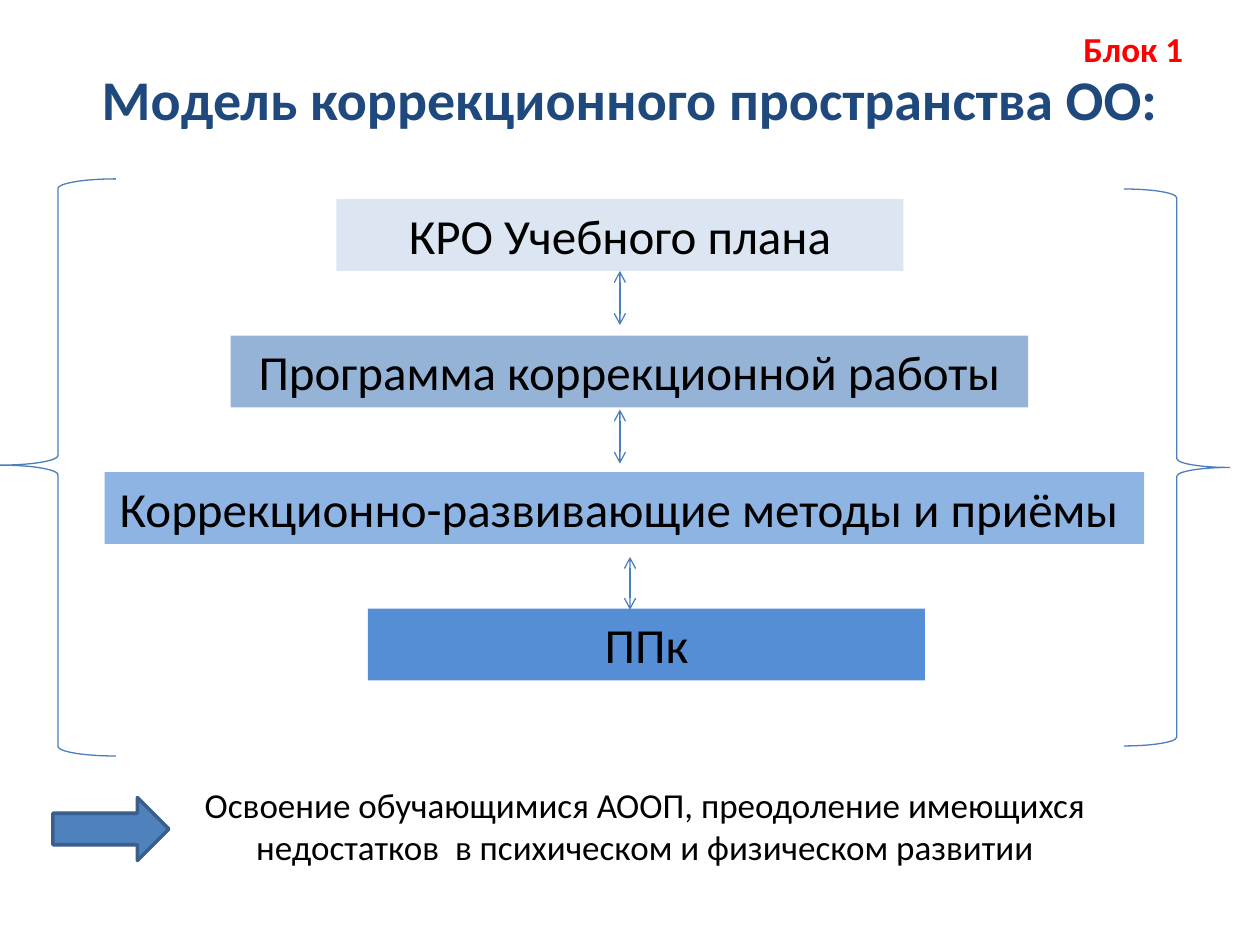
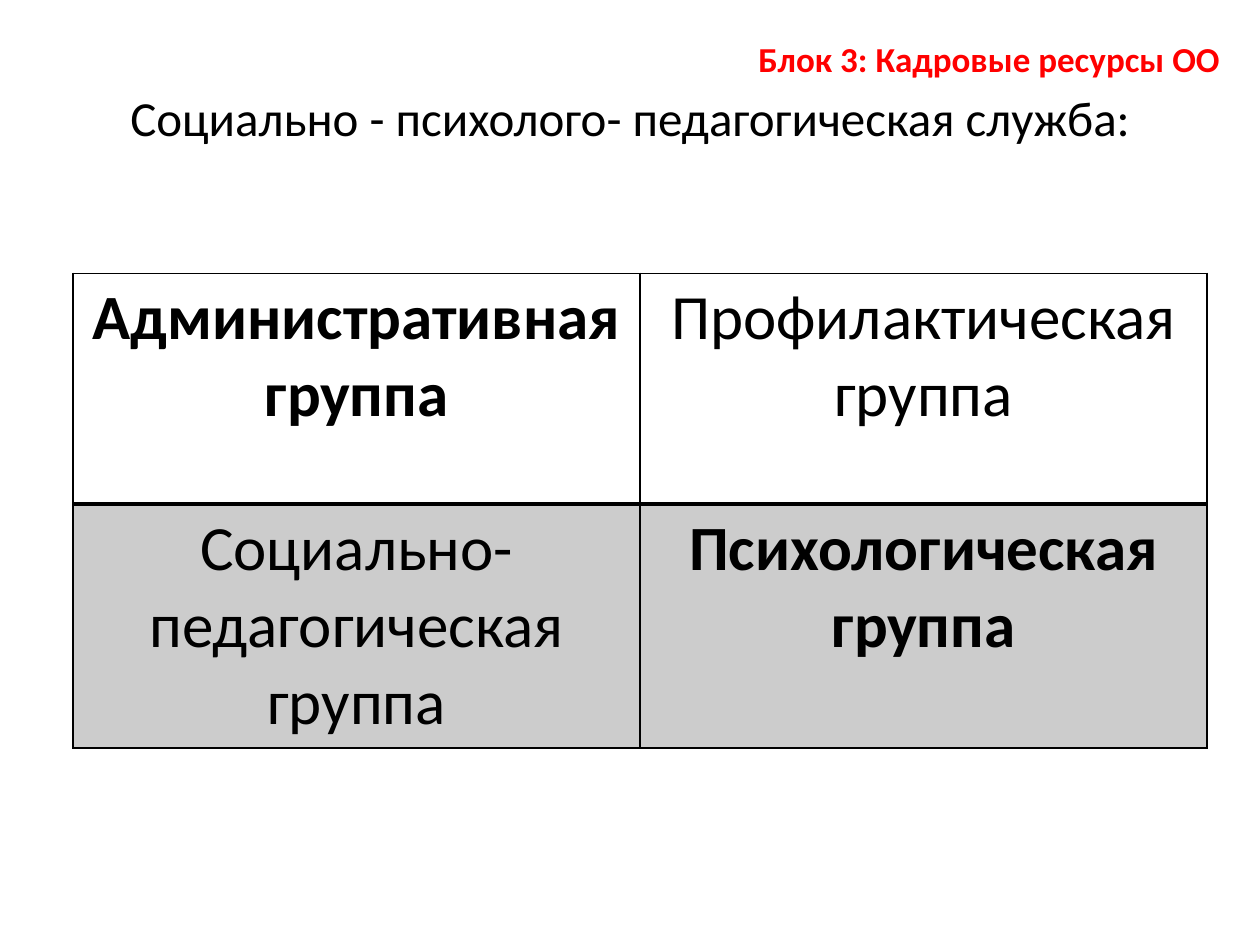
from dataclasses import dataclass

from lxml.etree import SubElement
from pptx import Presentation
from pptx.dml.color import RGBColor
from pptx.enum.shapes import MSO_CONNECTOR, MSO_SHAPE
from pptx.enum.text import MSO_ANCHOR, PP_ALIGN
from pptx.oxml.ns import qn
from pptx.shapes.autoshape import Shape
from pptx.shapes.connector import Connector
from pptx.slide import Slide
from pptx.table import _Cell
from pptx.text.text import TextFrame
from pptx.util import Inches, Pt

FONT = "Calibri"
BLACK = RGBColor(0x00, 0x00, 0x00)
WHITE = RGBColor(0xFF, 0xFF, 0xFF)
GREY = RGBColor(0xCC, 0xCC, 0xCC)
RED = RGBColor(0xFF, 0x00, 0x00)
NAVY = RGBColor(0x1F, 0x49, 0x7D)
LINE_BLUE = RGBColor(0x4B, 0x7E, 0xBC)
ARROW_FILL = RGBColor(0x4F, 0x81, 0xBD)
ARROW_EDGE = RGBColor(0x3A, 0x5F, 0x8C)

TITLE_ONLY = 5
STEP_TOP, STEP_PITCH, STEP_HEIGHT = 1.58, 13 / 12, 0.57
THIN, THICK = 1, 2


@dataclass(frozen=True)
class Box:
    left: float
    top: float
    width: float
    height: float

    def lengths(self) -> tuple[Inches, ...]:
        return tuple(map(Inches, (self.left, self.top, self.width, self.height)))


@dataclass(frozen=True)
class Step:
    text: str
    left: float
    width: float
    fill: RGBColor


@dataclass(frozen=True)
class Link:
    x: float
    top: float
    bottom: float


@dataclass(frozen=True)
class Group:
    text: str
    bold: bool


STEPS = (
    Step("КРО Учебного плана", 2.67, 4.5, RGBColor(0xDC, 0xE6, 0xF2)),
    Step("Программа коррекционной работы", 1.83, 6.33, RGBColor(0x95, 0xB3, 0xD7)),
    Step("Коррекционно-развивающие методы и приёмы ", 0.83, 8.25,
         RGBColor(0x8E, 0xB4, 0xE3)),
    Step("ППк", 2.92, 4.42, RGBColor(0x55, 0x8E, 0xD5)),
)
LINKS = (Link(4.92, 2.15, 2.58), Link(4.92, 3.25, 3.68), Link(5, 4.42, 4.84))
GROUPS = (
    (Group("Административная группа", True), Group("Профилактическая группа", False)),
    (Group("Социально-педагогическая группа", False),
     Group("Психологическая группа", True)),
)
ROW_HEIGHTS = (1.83, 1.93)
ROW_FILLS = (WHITE, GREY)


def write(frame: TextFrame, text: str, size: float, color: RGBColor = BLACK,
          bold: bool = False, align: PP_ALIGN = PP_ALIGN.CENTER) -> None:
    frame.text = text
    paragraph = frame.paragraphs[0]
    paragraph.alignment = align
    for run in paragraph.runs:
        run.font.name = FONT
        run.font.size = Pt(size)
        run.font.bold = bold
        run.font.color.rgb = color


def add_titled_slide(deck: Presentation, title: str, box: Box, size: float,
                     color: RGBColor, bold: bool) -> Slide:
    slide = deck.slides.add_slide(deck.slide_layouts[TITLE_ONLY])
    heading = slide.shapes.title
    heading.left, heading.top, heading.width, heading.height = box.lengths()
    write(heading.text_frame, title, size, color, bold)
    heading.text_frame.vertical_anchor = MSO_ANCHOR.MIDDLE
    return slide


def add_text(slide: Slide, text: str, box: Box, color: RGBColor = BLACK,
             bold: bool = False, align: PP_ALIGN = PP_ALIGN.CENTER,
             wrap: bool = True) -> None:
    frame = slide.shapes.add_textbox(*box.lengths()).text_frame
    frame.word_wrap = wrap
    write(frame, text, 20, color, bold, align)


def add_block_label(slide: Slide, text: str, box: Box, wrap: bool = True) -> None:
    add_text(slide, text, box, RED, True, PP_ALIGN.LEFT, wrap)


def add_figure(slide: Slide, kind: MSO_SHAPE, box: Box, fill: RGBColor | None = None,
               line: RGBColor | None = None, weight: float = 0.75) -> Shape:
    """Add a preset shape; a missing fill or line colour means none is drawn."""
    figure = slide.shapes.add_shape(kind, *box.lengths())
    figure.shadow.inherit = False
    if fill is None:
        figure.fill.background()
    else:
        figure.fill.solid()
        figure.fill.fore_color.rgb = fill
    if line is None:
        figure.line.fill.background()
    else:
        figure.line.color.rgb = line
        figure.line.width = Pt(weight)
    return figure


def add_step(slide: Slide, index: int, step: Step) -> Shape:
    box = Box(step.left, STEP_TOP + index * STEP_PITCH, step.width, STEP_HEIGHT)
    bar = add_figure(slide, MSO_SHAPE.RECTANGLE, box, step.fill)
    bar.text_frame.word_wrap = True
    bar.text_frame.vertical_anchor = MSO_ANCHOR.TOP
    write(bar.text_frame, step.text, 28)
    return bar


def add_link(slide: Slide, link: Link) -> Connector:
    """Add a thin vertical line with an open arrowhead at both ends."""
    arrow = slide.shapes.add_connector(
        MSO_CONNECTOR.STRAIGHT, Inches(link.x), Inches(link.top),
        Inches(link.x), Inches(link.bottom))
    arrow.line.color.rgb = LINE_BLUE
    arrow.line.width = Pt(0.75)
    outline = arrow.line._get_or_add_ln()
    for end in ("a:headEnd", "a:tailEnd"):
        SubElement(outline, qn(end), type="arrow")
    SubElement(arrow._element.spPr, qn("a:effectLst"))
    return arrow


def set_borders(cell: _Cell, top: float, bottom: float) -> None:
    properties = cell._tc.get_or_add_tcPr()
    for side, weight in (("L", THIN), ("R", THIN), ("T", top), ("B", bottom)):
        border = SubElement(properties, qn(f"a:ln{side}"), w=str(Pt(weight)))
        paint = SubElement(border, qn("a:solidFill"))
        SubElement(paint, qn("a:srgbClr"), val=str(BLACK))


def add_group_table(slide: Slide) -> None:
    box = Box(0.58, 2.17, 9, sum(ROW_HEIGHTS))
    table = slide.shapes.add_table(2, 2, *box.lengths()).table
    table.first_row = table.horz_banding = False
    edges = (THIN, THICK, THIN)
    for r, (groups, height, fill) in enumerate(zip(GROUPS, ROW_HEIGHTS, ROW_FILLS)):
        table.rows[r].height = Inches(height)
        for c, group in enumerate(groups):
            cell = table.cell(r, c)
            write(cell.text_frame, group.text, 36, bold=group.bold)
            set_borders(cell, edges[r], edges[r + 1])
            cell.fill.solid()
            cell.fill.fore_color.rgb = fill


def build_model_slide(deck: Presentation) -> None:
    slide = add_titled_slide(deck, "Модель коррекционного пространства ОО:",
                             Box(0.5, 0.3, 9, 0.95), 32, NAVY, True)
    bars = [add_step(slide, i, step) for i, step in enumerate(STEPS)]
    left_brace = add_figure(slide, MSO_SHAPE.LEFT_BRACE, Box(0, 1.42, 0.92, 4.58),
                            line=LINE_BLUE)
    left_brace.adjustments[1] = 0.496
    add_figure(slide, MSO_SHAPE.RIGHT_BRACE, Box(8.92, 1.5, 0.84, 4.42),
               line=LINE_BLUE)
    links = [add_link(slide, link) for link in LINKS]
    links[0].begin_connect(bars[0], 2)
    add_text(slide, "Освоение обучающимися АООП, преодоление имеющихся недостатков  "
             "в психическом и физическом развитии", Box(0.83, 6.17, 8.58, 0.77))
    add_figure(slide, MSO_SHAPE.RIGHT_ARROW, Box(0.42, 6.33, 0.92, 0.5),
               ARROW_FILL, ARROW_EDGE, 2)
    add_block_label(slide, "Блок 1", Box(8.5, 0.17, 1.25, 0.44))


def build_staff_slide(deck: Presentation) -> None:
    slide = add_titled_slide(deck, "Социально - психолого- педагогическая служба:",
                             Box(0.5, 0.3, 9, 1.25), 28, BLACK, False)
    add_group_table(slide)
    add_block_label(slide, "Блок 3: Кадровые ресурсы ОО",
                    Box(5.92, 0.25, 3.9, 0.44), wrap=False)


def main() -> None:
    deck = Presentation()
    deck.slide_width, deck.slide_height = Inches(10), Inches(7.5)
    build_model_slide(deck)
    build_staff_slide(deck)
    deck.save("out.pptx")


if __name__ == "__main__":
    main()
